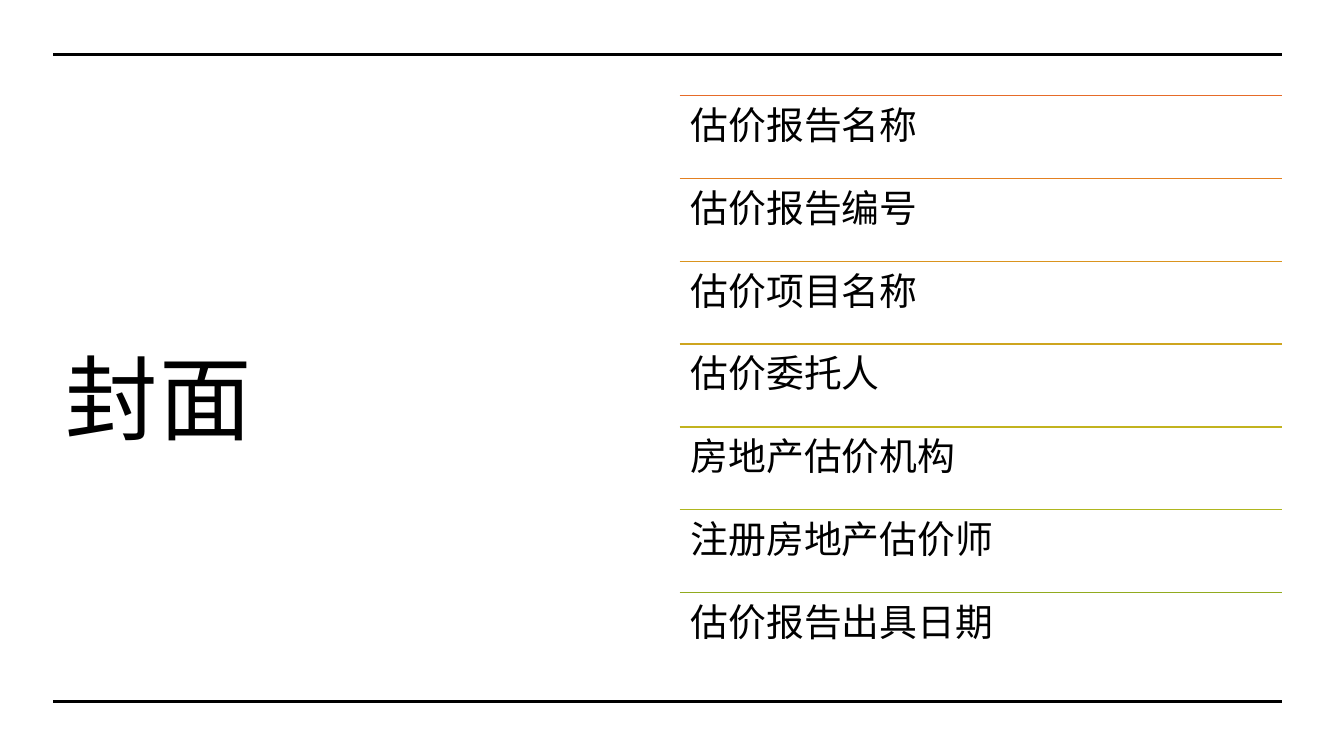
from lxml import etree
from pptx import Presentation
from pptx.dml.color import RGBColor
from pptx.enum import shapes, text
from pptx.oxml import ns
from pptx.util import Inches, Pt

TITLE = "封面"
ITEMS = [
    ("估价报告名称", RGBColor(0xE6, 0x6B, 0x29)),
    ("估价报告编号", RGBColor(0xE3, 0x80, 0x21)),
    ("估价项目名称", RGBColor(0xDA, 0x94, 0x1E)),
    ("估价委托人", RGBColor(0xCE, 0xA5, 0x1F)),
    ("房地产估价机构", RGBColor(0xC2, 0xB3, 0x1F)),
    ("注册房地产估价师", RGBColor(0xAF, 0xB6, 0x1F)),
    ("估价报告出具日期", RGBColor(0x91, 0xAB, 0x1F)),
]
BLACK = RGBColor(0, 0, 0)
FONT = "Noto Sans CJK SC"
LEFT, RIGHT = 0.53, 12.72
RULES = (0.54, 6.96)
LIST_X, TOP, HEIGHT = 6.74, 0.95, 5.75


def add_rule(parent, x, y, color, width):
    """Draw a level line from x to the right margin."""
    line = parent.add_connector(shapes.MSO_CONNECTOR.STRAIGHT,
                                Inches(x), Inches(y), Inches(RIGHT), Inches(y))
    line.line.color.rgb = color
    line.line.width = Pt(width)
    etree.SubElement(line._element.spPr, ns.qn("a:effectLst"))


def fill_text(shape, words, size, anchor, insets, spacing):
    """Write one left-aligned run and return its paragraph and run."""
    frame = shape.text_frame
    frame.word_wrap = True
    frame.auto_size = text.MSO_AUTO_SIZE.NONE
    frame.vertical_anchor = anchor
    (frame.margin_left, frame.margin_top,
     frame.margin_right, frame.margin_bottom) = map(Inches, insets)
    para = frame.paragraphs[0]
    para.alignment = text.PP_ALIGN.LEFT
    para.line_spacing = spacing
    run = para.add_run()
    run.text = words
    run.font.size = Pt(size)
    run.font.color.rgb = BLACK
    run.font.name = FONT
    etree.SubElement(run.font._element, ns.qn("a:ea"), typeface=FONT)
    return para, run


def main():
    """Build and save the cover slide."""
    deck = Presentation()
    deck.slide_width, deck.slide_height = Inches(13.33), Inches(7.5)
    slide = deck.slides.add_slide(deck.slide_layouts[5])

    title = slide.shapes.title
    title.left, title.top = Inches(LEFT), Inches(TOP)
    title.width, title.height = Inches(6.14), Inches(HEIGHT)
    para, run = fill_text(title, TITLE, 66, text.MSO_ANCHOR.MIDDLE,
                          (0.12, 0.12, 0.12, 0.1), 1.18)
    run.font._element.set("spc", "150")

    for y in RULES:
        add_rule(slide.shapes, LEFT, y, BLACK, 2.25)

    group = slide.shapes.add_group_shape().shapes
    step = HEIGHT / len(ITEMS)
    for row, (words, color) in enumerate(ITEMS):
        y = TOP + row * step
        add_rule(group, LIST_X, y, color, 1)
        box = group.add_textbox(Inches(LIST_X), Inches(y),
                                Inches(RIGHT - LIST_X), Inches(step))
        para, run = fill_text(box, words, 27, text.MSO_ANCHOR.TOP,
                              (0.11,) * 4, 0.9)
        para.space_after = Pt(9.45)

    deck.save("out.pptx")


if __name__ == "__main__":
    main()
